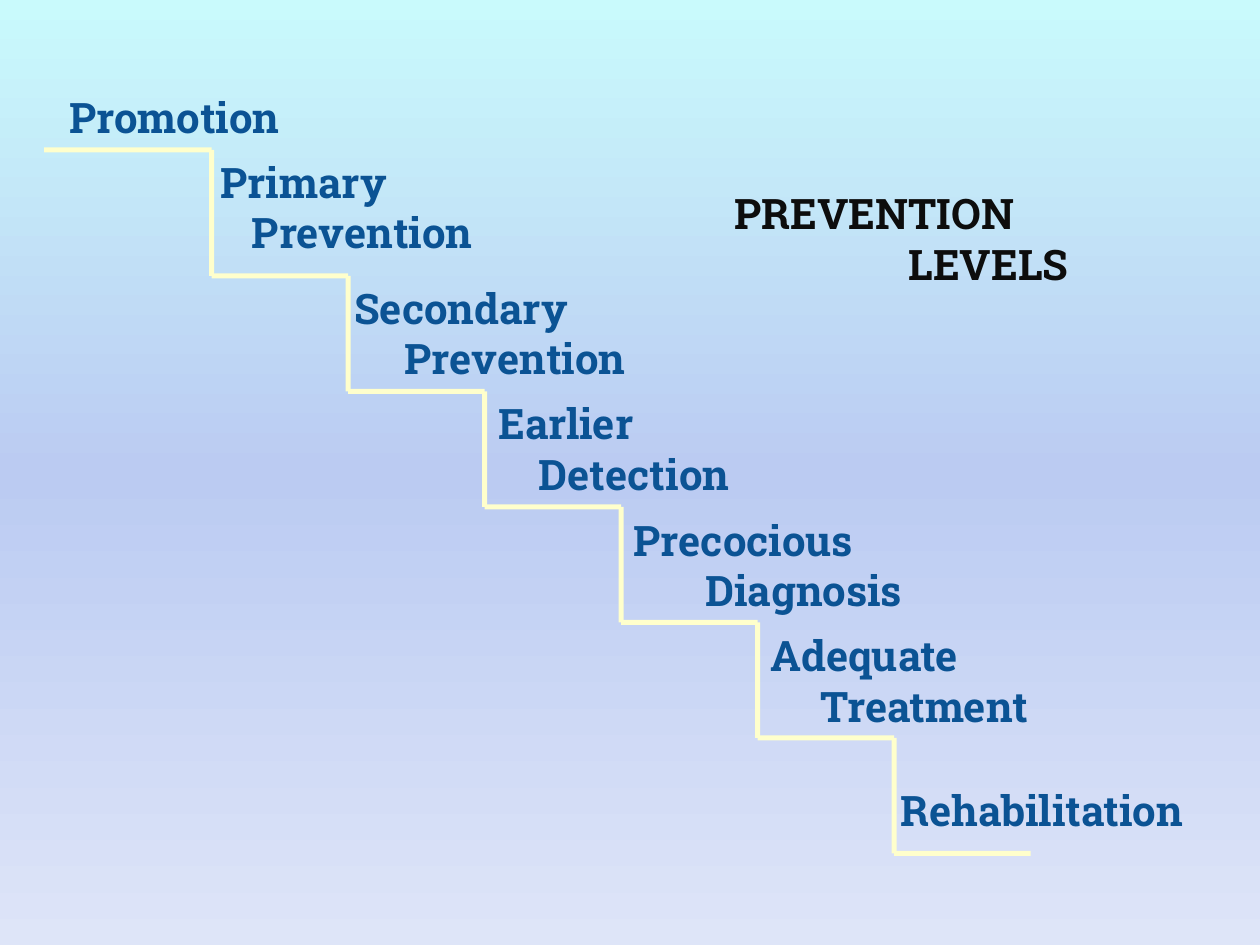
from copy import deepcopy

from pptx import Presentation
from pptx.dml import color as dml
from pptx.enum import shapes, text
from pptx.oxml.ns import qn
from pptx.util import Inches, Pt

COLORS = {
    "sky": "C9FAFC",
    "periwinkle": "BBCBF2",
    "mist": "DEE5F8",
    "stair": "FFFFCC",
    "level": "0B5394",
    "title": "0D0D0D",
}
FONT = "Roboto Slab"
THICKNESS = 0.04
LINE_HEIGHT = 0.4
STEP_WIDTH = 13 / 12
STEP_HEIGHT = 11 / 12
LEVELS = [
    (["Primary", "Prevention"], 0.07, 0.05, 0.25),
    (["Secondary", "Prevention"], 0.05, 0.05, 0.4),
    (["Earlier", "Detection"], 0.11, 0.05, 0.32),
    (["Precocious", "Diagnosis"], 0.1, 0.06, 0.57),
    (["Adequate", "Treatment"], 0.1, 0.06, 0.4),
    (["Rehabilitation"], 0.05, 0.37, 0),
]


def paint_background(slide):
    """Fill the slide with a three-colour vertical gradient."""
    fill = slide.background.fill
    fill.gradient()
    fill.gradient_angle = 270
    stop_list = next(slide.element.iter(qn("a:gsLst")))
    stop_list.insert(1, deepcopy(stop_list[0]))
    tones = ("sky", "periwinkle", "mist")
    for stop, tone, position in zip(fill.gradient_stops, tones, (0, 0.5, 1)):
        stop.color.rgb = dml.RGBColor.from_string(COLORS[tone])
        stop.position = position


def write_lines(holder, lines, indent, tone):
    """Write bold lines into a shape, indenting those after the first."""
    frame = holder.text_frame
    frame.margin_left = frame.margin_right = 0
    frame.margin_top = frame.margin_bottom = 0
    frame.vertical_anchor = text.MSO_ANCHOR.TOP
    frame.auto_size = text.MSO_AUTO_SIZE.NONE
    frame.word_wrap = True
    frame.text = "\n".join(lines)
    for number, paragraph in enumerate(frame.paragraphs):
        paragraph.alignment = text.PP_ALIGN.LEFT
        paragraph.font.name = FONT
        paragraph.font.size = Pt(24)
        paragraph.font.bold = True
        paragraph.font.color.rgb = dml.RGBColor.from_string(COLORS[tone])
        if number and indent:
            properties = paragraph._p.get_or_add_pPr()
            properties.set("marL", str(Inches(indent)))
            properties.set("indent", "0")


def add_bar(slide, left, top, width, height):
    """Draw one thin bar of the staircase."""
    bar = slide.shapes.add_shape(
        shapes.MSO_SHAPE.RECTANGLE,
        Inches(left), Inches(top), Inches(width), Inches(height))
    bar.shadow.inherit = False
    bar.fill.solid()
    bar.fill.fore_color.rgb = dml.RGBColor.from_string(COLORS["stair"])
    bar.line.fill.background()


def add_step(slide, box, level, riser=True):
    """Draw a step in its box, with its tread below and its label inside."""
    left, top, width, height = box
    lines, inset, drop, indent = level
    add_bar(slide, left, top + height - THICKNESS / 2, width, THICKNESS)
    if riser:
        add_bar(slide, left - THICKNESS / 2, top, THICKNESS, height)
    label = slide.shapes.add_textbox(
        Inches(left + inset), Inches(top + drop),
        Inches(2.5), Inches(LINE_HEIGHT * len(lines)))
    write_lines(label, lines, indent, "level")


def add_staircase(slide, left, top):
    """Place the steps downwards from the top left corner."""
    first_width, first_height = 1.33, 0.51
    add_step(slide, (left, top, first_width, first_height),
             (["Promotion"], 0.2, 0.05, 0), riser=False)
    left, top = left + first_width, top + first_height
    for number, level in enumerate(LEVELS):
        height = STEP_HEIGHT if number else 1
        add_step(slide, (left, top, STEP_WIDTH, height), level)
        left, top = left + STEP_WIDTH, top + height


def add_title(slide, left, top, width, height):
    """Move the title placeholder to its box and fill it."""
    title = slide.shapes.title
    title.left, title.top = Inches(left), Inches(top)
    title.width, title.height = Inches(width), Inches(height)
    write_lines(title, ["PREVENTION", "LEVELS"], 1.38, "title")


def main():
    """Build and save the slide."""
    deck = Presentation()
    deck.slide_width, deck.slide_height = Inches(10), Inches(7.5)
    slide = deck.slides.add_slide(deck.slide_layouts[5])
    paint_background(slide)
    add_staircase(slide, 0.35, 0.68)
    add_title(slide, 5.83, 1.49, 3.32, 0.81)
    deck.save("out.pptx")


if __name__ == "__main__":
    main()
